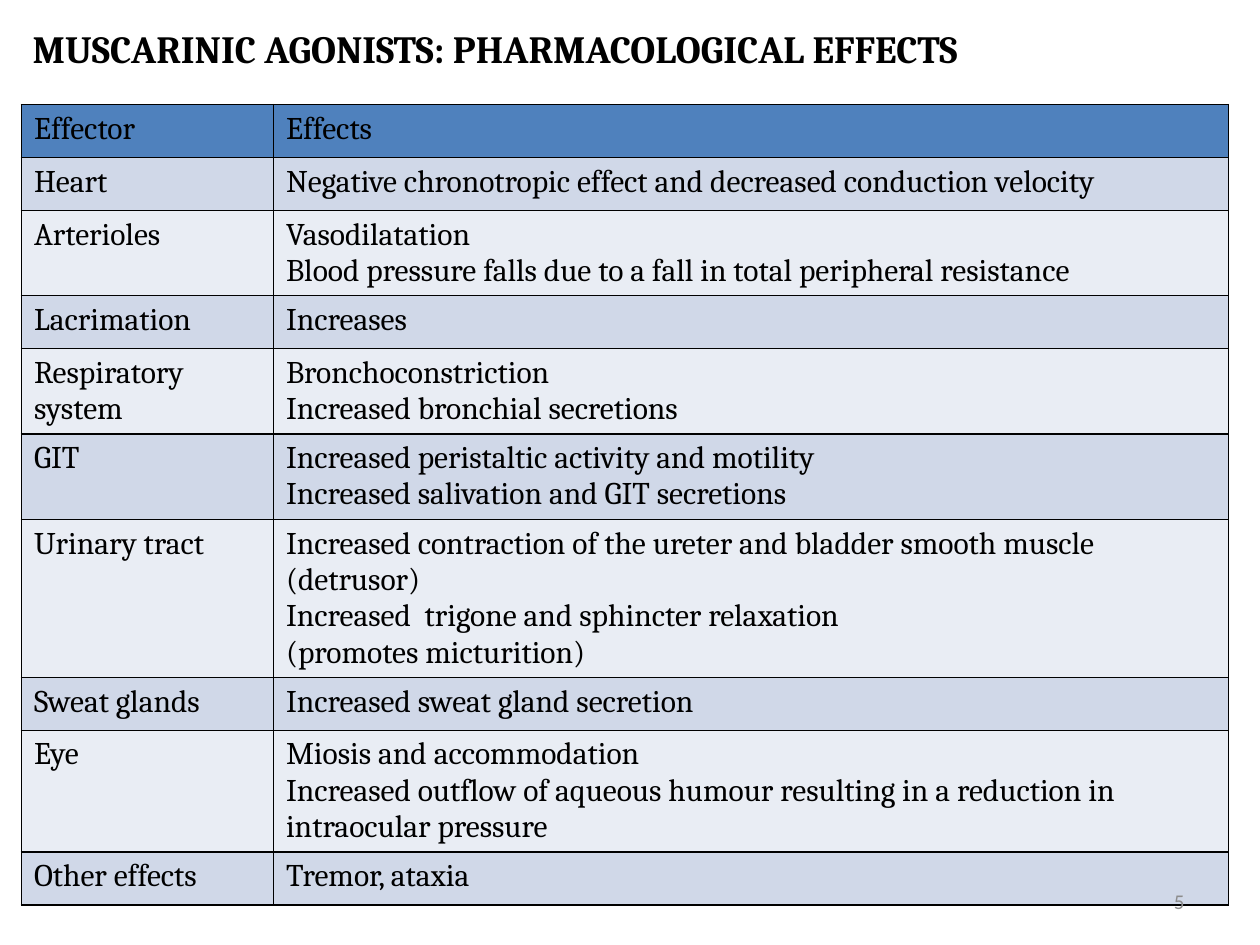
"""Build the slide on the pharmacological effects of muscarinic agonists."""
from dataclasses import dataclass

from lxml import etree
from pptx import Presentation
from pptx.dml.color import RGBColor
from pptx.enum.text import MSO_ANCHOR, MSO_AUTO_SIZE, PP_ALIGN
from pptx.oxml.ns import qn
from pptx.slide import Slide
from pptx.table import _Cell
from pptx.util import Inches, Pt

LEFT, RIGHT = PP_ALIGN.LEFT, PP_ALIGN.RIGHT
MIDDLE = MSO_ANCHOR.MIDDLE
NO_AUTO_SIZE = MSO_AUTO_SIZE.NONE
BORDER_TAGS = ("a:lnL", "a:lnR", "a:lnT", "a:lnB")


@dataclass(frozen=True)
class Theme:
    font: str = "Cambria"
    number_font: str = "Calibri"
    text: str = "000000"
    number: str = "8C8C8C"
    header: str = "4F81BD"
    bands: tuple[str, str] = ("D0D8E8", "E9EDF4")
    title_size: int = 22
    table_size: int = 18
    number_size: int = 12
    border_width: int = 1


@dataclass(frozen=True)
class EffectRow:
    effector: str
    effects: tuple[str, ...]


THEME = Theme()
ROWS = (
    EffectRow("Effector", ("Effects",)),
    EffectRow("Heart", ("Negative chronotropic effect and decreased conduction velocity",)),
    EffectRow("Arterioles", (
        "Vasodilatation",
        "Blood pressure falls due to a fall in total peripheral resistance",
    )),
    EffectRow("Lacrimation", ("Increases",)),
    EffectRow("Respiratory system", ("Bronchoconstriction", "Increased bronchial secretions")),
    EffectRow("GIT", (
        "Increased peristaltic activity and motility",
        "Increased salivation and GIT secretions",
    )),
    EffectRow("Urinary tract", (
        "Increased contraction of the ureter and bladder smooth muscle (detrusor)",
        "Increased  trigone and sphincter relaxation",
        "(promotes micturition)",
    )),
    EffectRow("Sweat glands", ("Increased sweat gland secretion",)),
    EffectRow("Eye", (
        "Miosis and accommodation",
        "Increased outflow of aqueous humour resulting in a reduction in intraocular pressure",
    )),
    EffectRow("Other effects", ("Tremor, ataxia",)),
)


def write_text(text_frame, lines: tuple[str, ...], font: str, size: int, color: str,
               bold: bool = False, alignment: PP_ALIGN = LEFT) -> None:
    """Write one formatted paragraph for each line."""
    text_frame.text = "\n".join(lines)
    for paragraph in text_frame.paragraphs:
        paragraph.alignment = alignment
        paragraph.font.name = font
        paragraph.font.size = Pt(size)
        paragraph.font.bold = bold
        paragraph.font.color.rgb = RGBColor.from_string(color)


def add_borders(cell: _Cell) -> None:
    """Draw a solid line on all four sides of a cell."""
    properties = cell._tc.get_or_add_tcPr()
    for position, tag in enumerate(BORDER_TAGS):
        line = etree.Element(qn(tag), w=str(Pt(THEME.border_width)))
        fill = etree.SubElement(line, qn("a:solidFill"))
        etree.SubElement(fill, qn("a:srgbClr"), val=THEME.text)
        properties.insert(position, line)


def fill_cell(cell: _Cell, lines: tuple[str, ...], color: str) -> None:
    """Set the text, fill and borders of a cell."""
    write_text(cell.text_frame, lines, THEME.font, THEME.table_size, THEME.text)
    cell.fill.solid()
    cell.fill.fore_color.rgb = RGBColor.from_string(color)
    add_borders(cell)


def add_title(slide: Slide, text: str) -> None:
    """Place and format the title placeholder."""
    title = slide.shapes.title
    title.left, title.top = Inches(0.16), Inches(0.17)
    title.width, title.height = Inches(9.58), Inches(0.42)
    title.text_frame.auto_size = NO_AUTO_SIZE
    title.text_frame.vertical_anchor = MIDDLE
    write_text(title.text_frame, (text,), THEME.font, THEME.title_size, THEME.text, bold=True)


def add_effects_table(slide: Slide, rows: tuple[EffectRow, ...]) -> None:
    """Add the banded table of effectors and effects."""
    row_height = Inches(0.42)
    table = slide.shapes.add_table(len(rows), 2, Inches(0.17), Inches(0.83),
                                   Inches(9.58), row_height * len(rows)).table
    table.columns[0].width, table.columns[1].width = Inches(2), Inches(7.58)
    for index, row in enumerate(rows):
        color = THEME.bands[(index - 1) % 2] if index else THEME.header
        fill_cell(table.cell(index, 0), (row.effector,), color)
        fill_cell(table.cell(index, 1), row.effects, color)


def add_slide_number(slide: Slide, number: str) -> None:
    """Add the slide number at the lower right."""
    box = slide.shapes.add_textbox(Inches(7.17), Inches(6.95), Inches(2.33), Inches(0.4))
    box.text_frame.word_wrap = True
    box.text_frame.vertical_anchor = MIDDLE
    write_text(box.text_frame, (number,), THEME.number_font, THEME.number_size,
               THEME.number, alignment=RIGHT)


def main() -> None:
    """Build and save the presentation."""
    presentation = Presentation()
    presentation.slide_width, presentation.slide_height = Inches(10), Inches(7.5)
    slide = presentation.slides.add_slide(presentation.slide_layouts[5])
    add_title(slide, "MUSCARINIC AGONISTS: PHARMACOLOGICAL EFFECTS")
    add_effects_table(slide, ROWS)
    add_slide_number(slide, "5")
    presentation.save("out.pptx")


if __name__ == "__main__":
    main()
